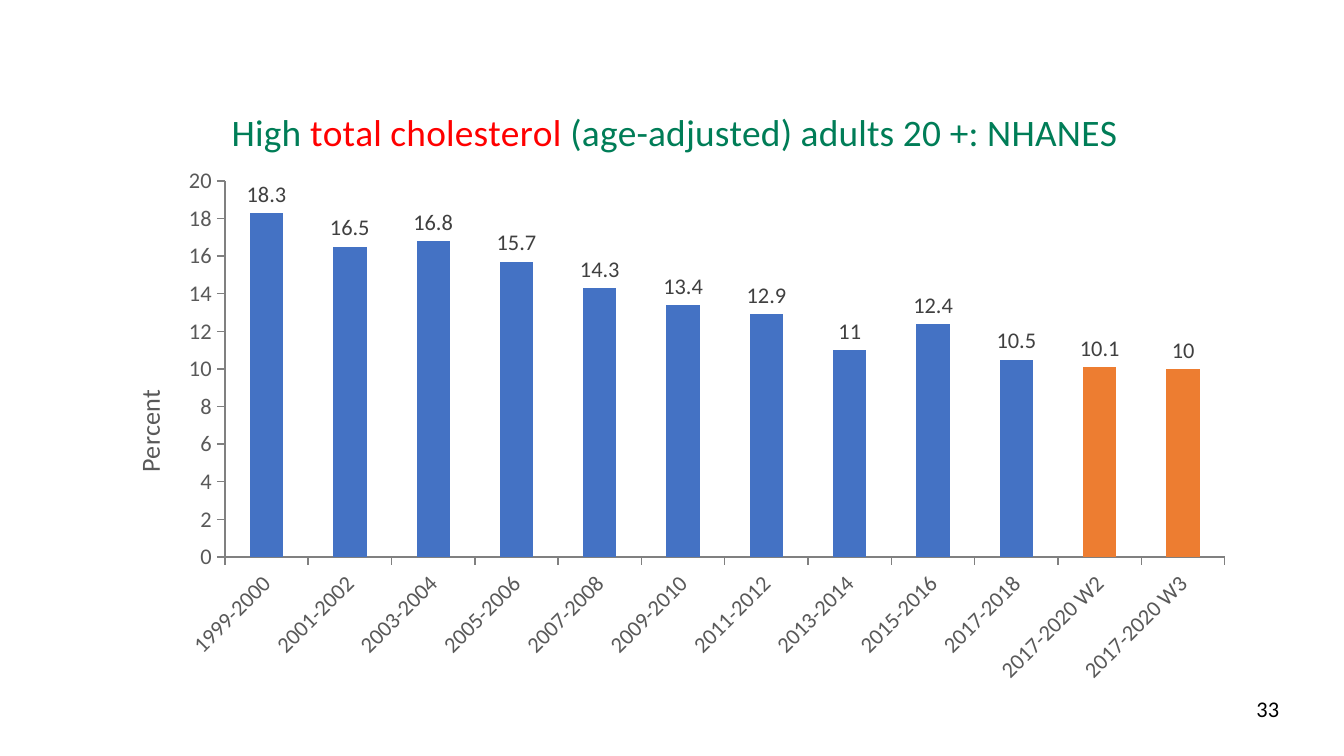
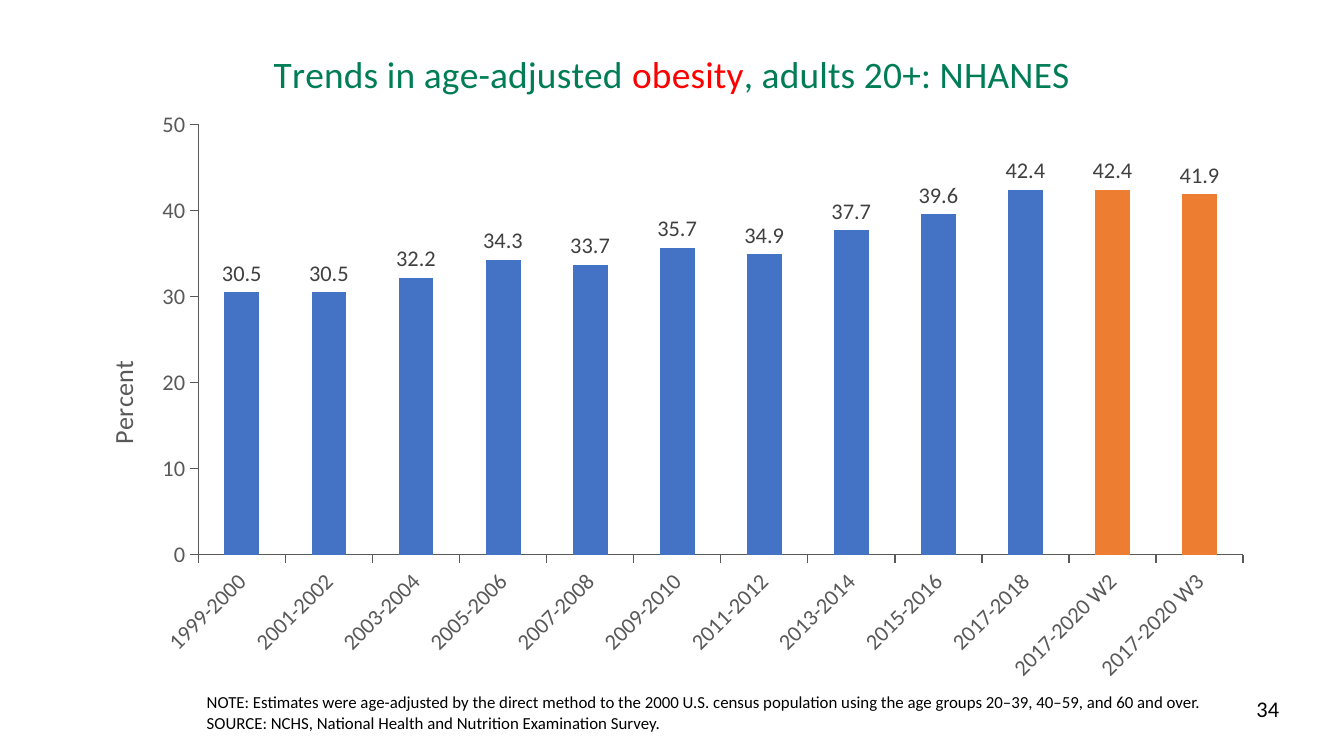
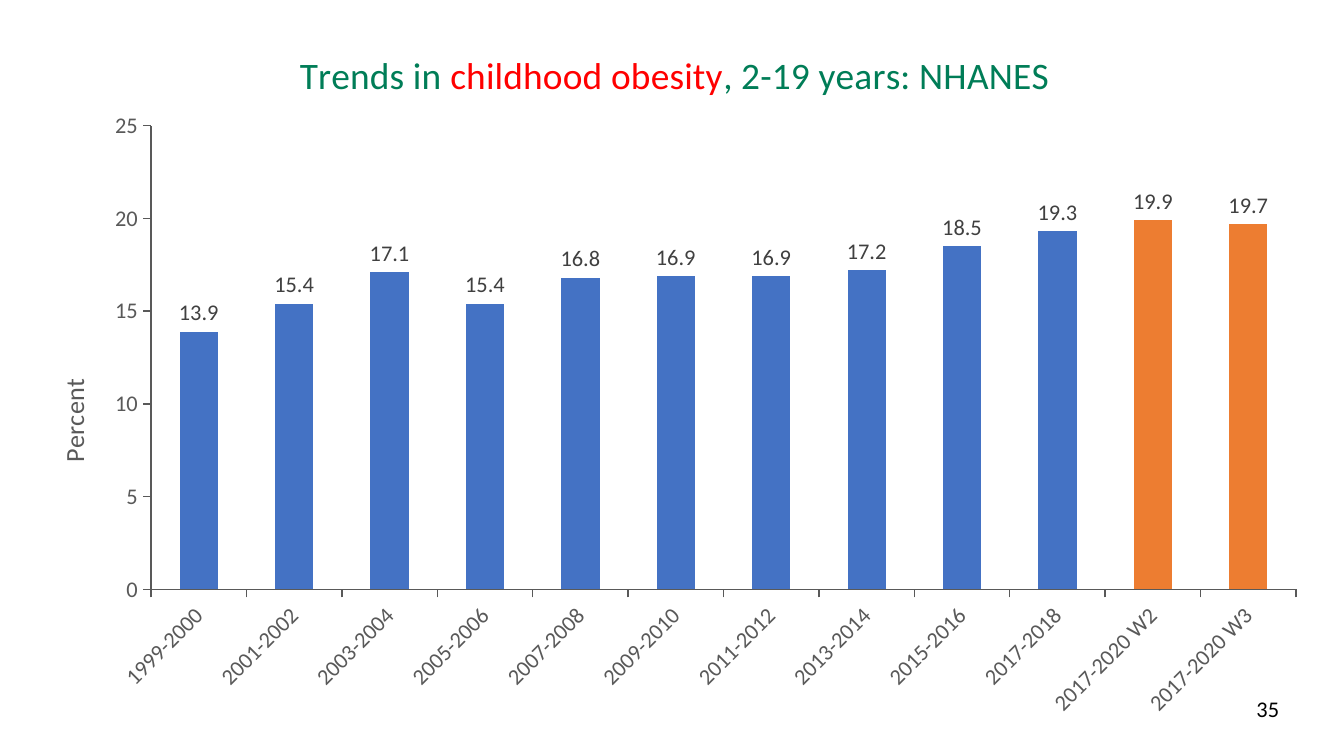
from dataclasses import dataclass
from typing import Any, NamedTuple

from lxml import etree
from pptx import Presentation
from pptx.chart.axis import CategoryAxis, ValueAxis
from pptx.chart.chart import Chart
from pptx.chart.data import CategoryChartData
from pptx.dml.color import RGBColor
from pptx.enum.chart import XL_CHART_TYPE, XL_LABEL_POSITION, XL_TICK_MARK
from pptx.enum.text import MSO_AUTO_SIZE
from pptx.oxml.ns import qn
from pptx.slide import Slide
from pptx.text.text import Font, TextFrame
from pptx.util import Pt

COLUMNS = XL_CHART_TYPE.COLUMN_CLUSTERED
LABELS_ABOVE = XL_LABEL_POSITION.OUTSIDE_END
TICK_OUTSIDE = XL_TICK_MARK.OUTSIDE
TICK_NONE = XL_TICK_MARK.NONE
GROW_TO_TEXT = MSO_AUTO_SIZE.SHAPE_TO_FIT_TEXT


@dataclass(frozen=True)
class Theme:
    """Colours, font and type sizes shared by all slides."""

    font: str = "Calibri"
    text: str = "000000"
    title: str = "007D57"
    accent: str = "FF0000"
    axis: str = "595959"
    label: str = "404040"
    bar: str = "4472C4"
    late_bar: str = "ED7D31"
    title_size: float = 20
    axis_title_size: float = 14
    body_size: float = 12
    chart_size: float = 10
    note_size: float = 9
    axis_width: float = 0.75


THEME = Theme()


class Area(NamedTuple):
    """A rectangle on the slide, in points."""

    left: float
    top: float
    width: float
    height: float


class Spot(NamedTuple):
    """The top left corner of a chart title, in points."""

    left: float
    top: float


@dataclass(frozen=True)
class Trend:
    """One slide with a column chart of a survey measure."""

    number: int
    title: tuple[str, str, str]
    values: tuple[float, ...]
    maximum: float
    step: float
    frame: Area
    plot: Area
    title_spot: Spot
    percent_spot: Spot
    axis_color: str = THEME.axis
    notes: tuple[str, ...] = ()


PAGE = Area(0, 0, 720, 405)
NUMBER_AREA = Area(666, 368.64, 49.68, 21.6)
NOTE_AREA = Area(103.68, 367.2, 576, 28.8)
CYCLES = [f"{year}-{year + 1}" for year in range(1999, 2012, 2)]
CYCLES += ["2013-2014", "2015-2016", "2017-2018", "2017-2020 W2", "2017-2020 W3"]
LATE_CYCLES = 2

TRENDS = (
    Trend(
        number=33,
        title=("High ", "total cholesterol", " (age-adjusted) adults 20 +: NHANES"),
        values=(18.3, 16.5, 16.8, 15.7, 14.3, 13.4, 12.9, 11, 12.4, 10.5, 10.1, 10),
        maximum=20,
        step=2,
        frame=Area(51.12, 40.32, 617.76, 333.36),
        plot=Area(120.5, 97, 535.7, 201.5),
        title_spot=Spot(122, 55.4),
        percent_spot=Spot(68, 206),
        axis_color="808080",
    ),
    Trend(
        number=34,
        title=("Trends in age-adjusted ", "obesity", ", adults 20+: NHANES"),
        values=(30.5, 30.5, 32.2, 34.3, 33.7, 35.7, 34.9, 37.7, 39.6, 42.4, 42.4, 41.9),
        maximum=50,
        step=10,
        frame=Area(36.72, 8.64, 642.24, 363.6),
        plot=Area(106.3, 66.7, 559.7, 230.6),
        title_spot=Spot(144.5, 24.2),
        percent_spot=Spot(53.6, 190.6),
        notes=(
            "NOTE: Estimates were age-adjusted by the direct method to the 2000 U.S. census "
            "population using the age groups 20–39, 40–59, and 60 and over.",
            "SOURCE: NCHS, National Health and Nutrition Examination Survey.",
        ),
    ),
    Trend(
        number=35,
        title=("Trends in ", "childhood obesity", ", 2-19 years: NHANES"),
        values=(13.9, 15.4, 17.1, 15.4, 16.8, 16.9, 16.9, 17.2, 18.5, 19.3, 19.9, 19.7),
        maximum=25,
        step=5,
        frame=Area(10.8, 8.64, 697.68, 382.32),
        plot=Area(80.9, 67.4, 613.4, 248.4),
        title_spot=Spot(158.4, 24.6),
        percent_spot=Spot(27.4, 200.4),
    ),
)


def apply(target: Any, **values: Any) -> None:
    """Set each named attribute on the target."""
    for name, value in values.items():
        setattr(target, name, value)


def style_font(font: Font, size: float, color: str) -> None:
    """Give a font the theme typeface with a size and colour."""
    apply(font, name=THEME.font, size=Pt(size), bold=False)
    font.color.rgb = RGBColor.from_string(color)


def add_text(slide: Slide, area: Area, lines: tuple[str, ...], size: float) -> None:
    """Add a text box with one paragraph per line."""
    frame = slide.shapes.add_textbox(*map(Pt, area)).text_frame
    apply(frame, word_wrap=True, auto_size=GROW_TO_TEXT)
    for index, line in enumerate(lines):
        para = frame.add_paragraph() if index else frame.paragraphs[0]
        span = para.add_run()
        span.text = line
        style_font(span.font, size, THEME.text)


def add_span(frame: TextFrame, text: str, size: float, color: str) -> None:
    """Append a styled run to the first paragraph of a title."""
    span = frame.paragraphs[0].add_run()
    span.text = text
    style_font(span.font, size, color)


def place(element: Any, area: Area | Spot, frame: Area) -> None:
    """Fix a chart part at a slide position, as fractions of the chart frame."""
    layout = element.find(qn("c:layout"))
    if layout is None:
        layout = etree.Element(qn("c:layout"))
        element.insert(len(element.findall(qn("c:tx"))), layout)
    manual = etree.SubElement(layout, qn("c:manualLayout"))
    settings = {"xMode": "edge", "yMode": "edge"}
    if isinstance(area, Area):
        settings = {"layoutTarget": "inner", **settings}
    settings["x"] = f"{(area.left - frame.left) / frame.width:.4f}"
    settings["y"] = f"{(area.top - frame.top) / frame.height:.4f}"
    if isinstance(area, Area):
        settings["w"] = f"{area.width / frame.width:.4f}"
        settings["h"] = f"{area.height / frame.height:.4f}"
    for name, value in settings.items():
        etree.SubElement(manual, qn(f"c:{name}")).set("val", value)


def style_axis(axis: CategoryAxis | ValueAxis, color: str) -> None:
    """Give an axis its line, outside ticks and label font."""
    apply(
        axis,
        has_major_gridlines=False,
        major_tick_mark=TICK_OUTSIDE,
        minor_tick_mark=TICK_NONE,
    )
    axis.format.line.color.rgb = RGBColor.from_string(color)
    axis.format.line.width = Pt(THEME.axis_width)
    style_font(axis.tick_labels.font, THEME.body_size, THEME.axis)


def style_bars(chart: Chart) -> None:
    """Colour the columns, mark the late cycles and label every value."""
    plot = chart.plots[0]
    apply(plot, gap_width=150, vary_by_categories=False, has_data_labels=True)
    series = plot.series[0]
    series.invert_if_negative = False
    late = [series.points[len(CYCLES) - 1 - index] for index in range(LATE_CYCLES)]
    for bar, color in [(series, THEME.bar)] + [(point, THEME.late_bar) for point in late]:
        bar.format.fill.solid()
        bar.format.fill.fore_color.rgb = RGBColor.from_string(color)
    apply(plot.data_labels, show_value=True, position=LABELS_ABOVE)
    style_font(plot.data_labels.font, THEME.body_size, THEME.label)


def add_titles(chart: Chart, trend: Trend) -> None:
    """Write the chart title and the turned title of the value axis."""
    heading = chart.chart_title
    heading.include_in_layout = False
    for text, color in zip(trend.title, (THEME.title, THEME.accent, THEME.title)):
        add_span(heading.text_frame, text, THEME.title_size, color)
    place(heading.element, trend.title_spot, trend.frame)
    percent = chart.value_axis.axis_title
    add_span(percent.text_frame, "Percent", THEME.axis_title_size, THEME.axis)
    body = percent.element.xpath("c:tx/c:rich/a:bodyPr")[0]
    body.set("rot", "-5400000")
    body.set("vert", "horz")
    place(percent.element, trend.percent_spot, trend.frame)


def add_trend_chart(slide: Slide, trend: Trend) -> None:
    """Draw the column chart of one trend."""
    data = CategoryChartData()
    data.categories = CYCLES
    data.add_series("Series 1", trend.values)
    chart = slide.shapes.add_chart(COLUMNS, *map(Pt, trend.frame), data).chart
    apply(chart, has_legend=False, has_title=True)
    style_font(chart.font, THEME.chart_size, THEME.text)
    for axis in (chart.category_axis, chart.value_axis):
        style_axis(axis, trend.axis_color)
    chart.category_axis._element.xpath("c:txPr/a:bodyPr")[0].set("rot", "-2700000")
    apply(
        chart.value_axis,
        minimum_scale=0,
        maximum_scale=trend.maximum,
        major_unit=trend.step,
    )
    style_bars(chart)
    add_titles(chart, trend)
    place(chart.element.xpath("c:chart/c:plotArea")[0], trend.plot, trend.frame)


def main() -> None:
    """Build the deck and save it."""
    deck = Presentation()
    apply(deck, slide_width=Pt(PAGE.width), slide_height=Pt(PAGE.height))
    for trend in TRENDS:
        page = deck.slides.add_slide(deck.slide_layouts[6])
        add_text(page, NUMBER_AREA, (str(trend.number),), THEME.body_size)
        add_trend_chart(page, trend)
        if trend.notes:
            add_text(page, NOTE_AREA, trend.notes, THEME.note_size)
    deck.save("out.pptx")


if __name__ == "__main__":
    main()
